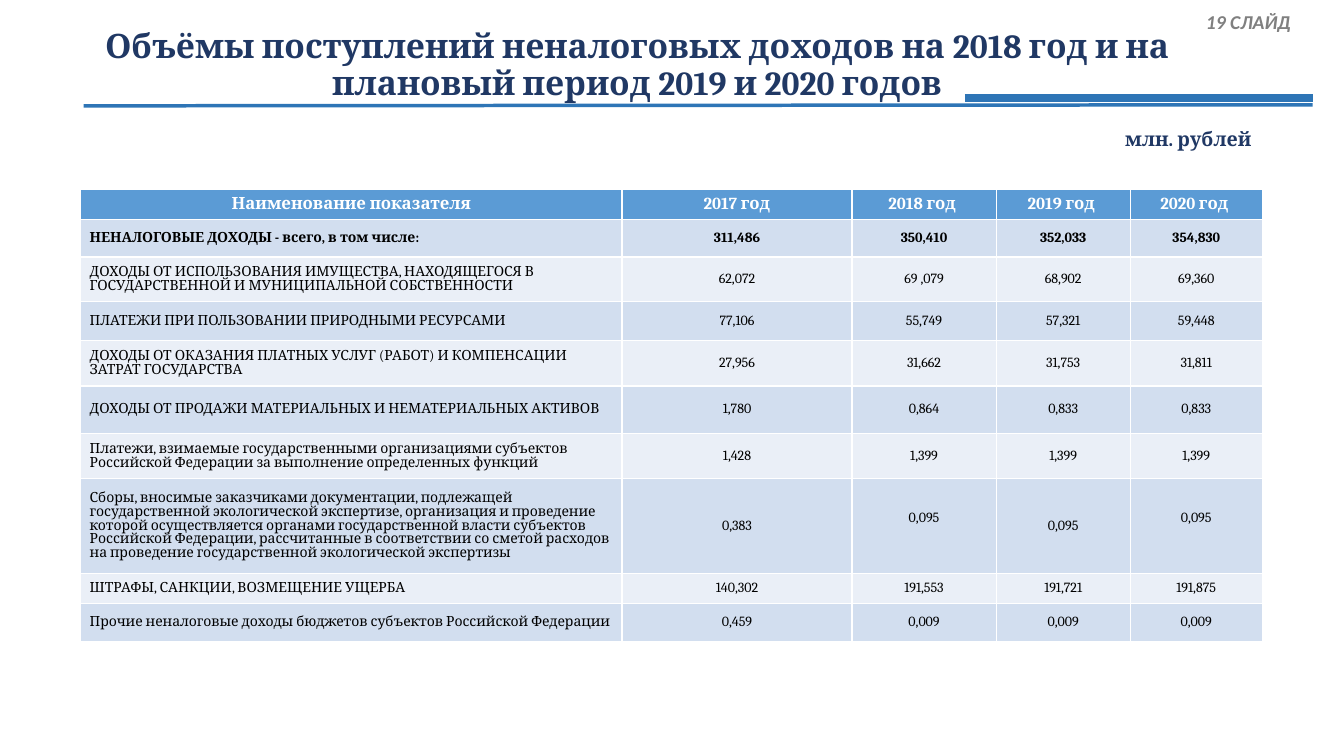
"""Build the slide on non-tax revenue for 2018 and the planning period 2019-2020."""
from dataclasses import dataclass
from typing import Any

from lxml.etree import SubElement
from pptx import Presentation
from pptx.dml.color import RGBColor
from pptx.enum.shapes import MSO_CONNECTOR
from pptx.enum.text import MSO_ANCHOR, PP_ALIGN
from pptx.oxml.ns import qn
from pptx.slide import Slide
from pptx.util import Inches, Pt


@dataclass(frozen=True)
class Theme:
    """Colours, fonts and type sizes of the slide."""
    navy: str = "203864"
    rule: str = "2E75B6"
    grey: str = "808080"
    head: str = "5B9BD5"
    bands: tuple[str, str] = ("D2DEEF", "EAEFF7")
    white: str = "FFFFFF"
    black: str = "000000"
    serif: str = "Cambria"
    sans: str = "Calibri"
    title_pt: int = 24
    label_pt: int = 14
    head_pt: int = 12
    body_pt: int = 10


@dataclass(frozen=True)
class Label:
    """A one-line right-aligned text box."""
    text: str
    box: tuple[float, float, float, float]
    font: str
    color: str
    italic: bool = False


@dataclass(frozen=True)
class Rule:
    """A straight line under the title."""
    start: tuple[float, float]
    end: tuple[float, float]
    weight: float


@dataclass(frozen=True)
class Row:
    """A table row: height, indicator name and yearly values."""
    height: float
    name: str
    values: tuple[str, ...]


THEME = Theme()
TITLE = "Объёмы поступлений неналоговых доходов на 2018 год и на плановый период 2019 и 2020 годов"
LABELS = (
    Label("млн. рублей", (10.8, 1.21, 1.71, 0.34), THEME.serif, THEME.navy),
    Label("19 СЛАЙД", (11.72, 0.05, 1.18, 0.34), THEME.sans, THEME.grey, True),
)
RULES = (
    Rule((0.83, 1.05), (13.02, 1.04), 2.5),
    Rule((9.57, 0.97), (13.02, 0.97), 6),
)
COLUMNS = (5.37, 2.28, 1.43, 1.33, 1.31)
ROWS = (
    Row(0.3, "Наименование показателя", ("2017 год", "2018 год ", "2019 год ", "2020 год ")),
    Row(0.37, "НЕНАЛОГОВЫЕ ДОХОДЫ - всего, в том числе:",
        ("311,486", "350,410", "352,033", "354,830")),
    Row(0.44, "ДОХОДЫ ОТ ИСПОЛЬЗОВАНИЯ ИМУЩЕСТВА, НАХОДЯЩЕГОСЯ В "
        "ГОСУДАРСТВЕННОЙ И МУНИЦИПАЛЬНОЙ СОБСТВЕННОСТИ",
        ("62,072", "69 ,079", "68,902", "69,360")),
    Row(0.39, "ПЛАТЕЖИ ПРИ ПОЛЬЗОВАНИИ ПРИРОДНЫМИ РЕСУРСАМИ",
        ("77,106", "55,749", "57,321", "59,448")),
    Row(0.45, "ДОХОДЫ ОТ ОКАЗАНИЯ ПЛАТНЫХ УСЛУГ (РАБОТ) И КОМПЕНСАЦИИ ЗАТРАТ ГОСУДАРСТВА",
        ("27,956", "31,662", "31,753", "31,811")),
    Row(0.47, "ДОХОДЫ ОТ ПРОДАЖИ МАТЕРИАЛЬНЫХ И НЕМАТЕРИАЛЬНЫХ АКТИВОВ",
        ("1,780", "0,864", "0,833", "0,833")),
    Row(0.45, "Платежи, взимаемые государственными организациями субъектов "
        "Российской Федерации за выполнение определенных функций",
        ("1,428", "1,399", "1,399", "1,399")),
    Row(0.94, "Сборы, вносимые заказчиками документации, подлежащей государственной "
        "экологической экспертизе, организация и проведение которой осуществляется "
        "органами государственной власти субъектов Российской Федерации, рассчитанные "
        "в соответствии со сметой расходов на проведение государственной экологической "
        "экспертизы", ("0,383", "0,095", "0,095", "0,095")),
    Row(0.3, "ШТРАФЫ, САНКЦИИ, ВОЗМЕЩЕНИЕ УЩЕРБА",
        ("140,302", "191,553", "191,721", "191,875")),
    Row(0.38, "Прочие неналоговые доходы бюджетов субъектов Российской Федерации",
        ("0,459", "0,009", "0,009", "0,009")),
)
RAISED_CELLS = {(7, 2), (7, 4)}


def write(tf: Any, text: str, align: PP_ALIGN, color: str, spacing: float = 1.0,
          **font: Any) -> None:
    """Fill a text frame with one formatted paragraph."""
    p = tf.paragraphs[0]
    p.alignment = align
    p.line_spacing = spacing
    r = p.add_run()
    r.text = text
    for key, value in font.items():
        setattr(r.font, key, value)
    r.font.color.rgb = RGBColor.from_string(color)


def add_title(s: Slide) -> None:
    """Place and fill the title placeholder."""
    sp = s.shapes.title
    box = {"left": 0.27, "top": 0.26, "width": 12.1, "height": 0.79}
    for key, value in box.items():
        setattr(sp, key, Inches(value))
    sp.text_frame.vertical_anchor = MSO_ANCHOR.MIDDLE
    write(sp.text_frame, TITLE, PP_ALIGN.CENTER, THEME.navy, 0.9,
          name=THEME.serif, size=Pt(THEME.title_pt), bold=True)


def add_label(s: Slide, label: Label) -> None:
    """Draw a right-aligned label."""
    tf = s.shapes.add_textbox(*map(Inches, label.box)).text_frame
    tf.word_wrap = True
    write(tf, label.text, PP_ALIGN.RIGHT, label.color, name=label.font,
          size=Pt(THEME.label_pt), bold=True, italic=label.italic)


def add_rule(s: Slide, rule: Rule) -> None:
    """Draw a line without a shadow."""
    points = map(Inches, rule.start + rule.end)
    line = s.shapes.add_connector(MSO_CONNECTOR.STRAIGHT, *points)
    line.line.color.rgb = RGBColor.from_string(THEME.rule)
    line.line.width = Pt(rule.weight)
    SubElement(line._element.spPr, qn("a:effectLst"))


def add_revenue_table(s: Slide) -> None:
    """Draw the revenue table with a header and alternating bands."""
    size = (sum(COLUMNS), sum(row.height for row in ROWS))
    frame = s.shapes.add_table(len(ROWS), len(COLUMNS), *map(Inches, (0.8, 1.88, *size)))
    table = frame.table
    for column, width in zip(table.columns, COLUMNS):
        column.width = Inches(width)
    for i, row in enumerate(ROWS):
        table.rows[i].height = Inches(row.height)
        header = i == 0
        fill = THEME.head if header else THEME.bands[(i - 1) % 2]
        for j, text in enumerate((row.name, *row.values)):
            cell = table.cell(i, j)
            bottom = 0.21 if (i, j) in RAISED_CELLS else 0.05
            layout = {"vertical_anchor": MSO_ANCHOR.MIDDLE, "margin_left": Inches(0.09),
                      "margin_right": Inches(0.09), "margin_bottom": Inches(bottom)}
            for key, value in layout.items():
                setattr(cell, key, value)
            cell.fill.solid()
            cell.fill.fore_color.rgb = RGBColor.from_string(fill)
            write(cell.text_frame, text,
                  PP_ALIGN.CENTER if header or j else PP_ALIGN.LEFT,
                  THEME.white if header else THEME.black, 0.85, name=THEME.serif,
                  size=Pt(THEME.head_pt if header else THEME.body_pt), bold=i < 2)


def main() -> None:
    """Build and save the presentation."""
    prs = Presentation()
    prs.slide_width, prs.slide_height = Inches(13.33), Inches(7.5)
    s = prs.slides.add_slide(prs.slide_layouts[5])
    add_title(s)
    for label in LABELS:
        add_label(s, label)
    for rule in RULES:
        add_rule(s, rule)
    add_revenue_table(s)
    prs.save("out.pptx")


if __name__ == "__main__":
    main()
